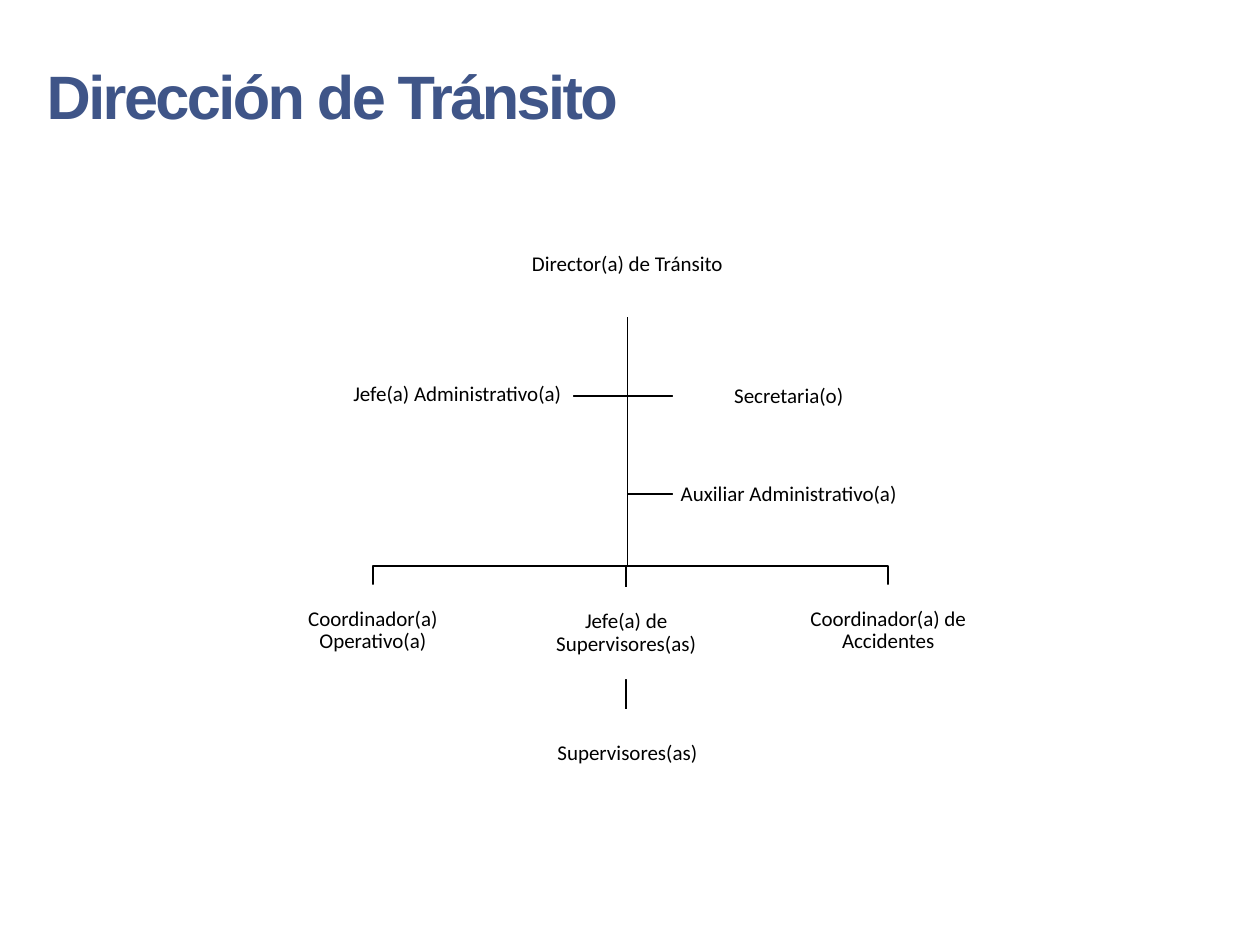
from dataclasses import dataclass

from lxml import etree
from pptx import Presentation
from pptx import util as u
from pptx.dml.color import RGBColor
from pptx.enum import shapes, text
from pptx.oxml import ns

BLACK = RGBColor(0x00, 0x00, 0x00)
WHITE = RGBColor(0xFF, 0xFF, 0xFF)
TITLE_BLUE = RGBColor(0x3F, 0x55, 0x88)
LINE_WIDTH = u.Pt(1)

TRUNK = (4.98, 2.52)
BRANCH_Y = 4.49


@dataclass(frozen=True)
class Post:
    lines: tuple[str, ...]
    left: float
    top: float
    width: float = 1.76
    height: float = 0.73
    filled: bool = True


POSTS = (
    Post(("Director(a) de Tránsito",), 3.8, 1.67, 2.36, 0.86, filled=False),
    Post(("Coordinador(a) Operativo(a)",), 2.08, 4.64),
    Post(("Jefe(a) de", "Supervisores(as)"), 4.09, 4.66),
    Post(("Supervisores(as)",), 4.1, 5.63, height=0.7),
    Post(("Coordinador(a) de", "Accidentes"), 6.17, 4.64),
    Post(("Jefe(a) Administrativo(a)",), 2.71, 2.86, 1.84, 0.55),
    Post(("Auxiliar Administrativo(a)",), 5.34, 3.65, 1.84, 0.55),
    Post(("Secretaria(o)",), 5.34, 2.87, 1.84, 0.55),
)

STAFF_ENDS = ((5.34, 3.14), (5.34, 3.92), (4.54, 3.14))
BRANCH_ENDS = ((7.05, 4.64), (4.97, 4.66), (2.96, 4.64))


def write(para, words: str, *, font: str, size: float, color: RGBColor,
          bold: bool = False, align=text.PP_ALIGN.CENTER,
          line_spacing: float = 1.0, tracking: float = 0) -> None:
    para.alignment = align
    para.line_spacing = line_spacing
    para.space_before = u.Pt(0)
    span = para.add_run()
    span.text = words
    span.font.name = font
    span.font.size = u.Pt(size)
    span.font.bold = bold
    span.font.color.rgb = color
    if tracking:
        span.font._element.set("spc", str(round(tracking * 100)))


def draw_title(page, words: str) -> None:
    title = page.shapes.title
    title.left, title.top = u.Inches(0.27), u.Inches(0.41)
    title.width, title.height = u.Inches(7.46), u.Inches(0.69)
    frame = title.text_frame
    frame.word_wrap = True
    frame.auto_size = text.MSO_AUTO_SIZE.SHAPE_TO_FIT_TEXT
    frame.vertical_anchor = text.MSO_ANCHOR.TOP
    write(frame.paragraphs[0], words, font="Arial", size=35, color=TITLE_BLUE,
          bold=True, align=text.PP_ALIGN.LEFT, tracking=-1.5)


def draw_path(page, points: list[tuple[float, float]]) -> None:
    start, *rest = [(u.Inches(x), u.Inches(y)) for x, y in points]
    builder = page.shapes.build_freeform(*start)
    builder.add_line_segments(rest, close=False)
    path = builder.convert_to_shape()
    path.shadow.inherit = False
    path.fill.background()
    path.line.color.rgb = BLACK
    path.line.width = LINE_WIDTH


def draw_line(page, x: float, top: float, bottom: float) -> None:
    line = page.shapes.add_connector(
        shapes.MSO_CONNECTOR.STRAIGHT,
        u.Inches(x), u.Inches(top), u.Inches(x), u.Inches(bottom))
    line.line.color.rgb = BLACK
    line.line.width = LINE_WIDTH
    etree.SubElement(line._element.spPr, ns.qn("a:effectLst"))


def draw_post(page, post: Post) -> None:
    box = page.shapes.add_shape(
        shapes.MSO_SHAPE.RECTANGLE, u.Inches(post.left), u.Inches(post.top),
        u.Inches(post.width), u.Inches(post.height))
    box.shadow.inherit = False
    box.line.fill.background()
    if post.filled:
        box.fill.solid()
        box.fill.fore_color.rgb = WHITE
    else:
        box.fill.background()
    frame = box.text_frame
    frame.word_wrap = True
    frame.vertical_anchor = text.MSO_ANCHOR.MIDDLE
    frame.margin_left = frame.margin_right = u.Inches(0.01)
    frame.margin_top = frame.margin_bottom = u.Inches(0.01)
    for index, words in enumerate(post.lines):
        para = frame.add_paragraph() if index else frame.paragraphs[0]
        write(para, words, font="Calibri", size=12, color=BLACK,
              line_spacing=0.9)


def main() -> None:
    deck = Presentation()
    deck.slide_width, deck.slide_height = u.Inches(10), u.Inches(7.5)
    page = deck.slides.add_slide(deck.slide_layouts.get_by_name("Title Only"))
    draw_title(page, "Dirección de Tránsito")
    trunk_x = TRUNK[0]
    for end in STAFF_ENDS:
        draw_path(page, [TRUNK, (trunk_x, end[1]), end])
    for end in BRANCH_ENDS:
        draw_path(page, [TRUNK, (trunk_x, BRANCH_Y), (end[0], BRANCH_Y), end])
    draw_line(page, 4.97, 5.39, 5.63)
    for post in POSTS:
        draw_post(page, post)
    deck.save("out.pptx")


if __name__ == "__main__":
    main()
